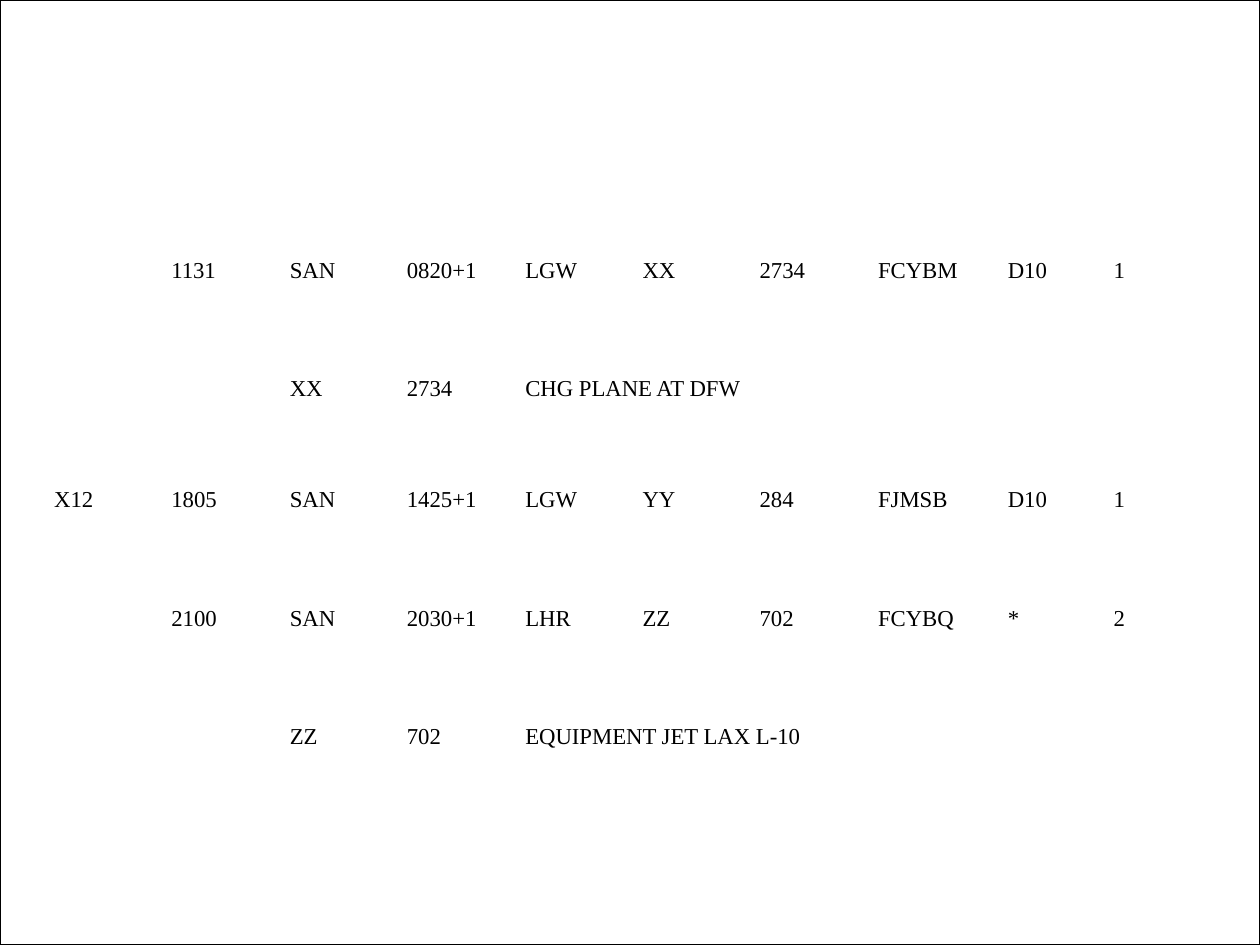
from pptx import Presentation
from pptx import util as u
from pptx.dml.color import RGBColor
from pptx.enum import shapes, text

COLUMN_WIDTHS = [0.93, 0.94, 0.93, 0.94, 0.93, 0.93, 0.94, 1.03, 0.84, 0.93]
ROW_HEIGHTS = [0.94, 0.88, 0.94, 0.94, 0.73]
FLIGHTS = [
    ["", "1131", "SAN", "0820+1", "LGW", "XX", "2734", "FCYBM", "D10", "1"],
    ["", "", "XX", "2734", "CHG PLANE AT DFW"],
    ["X12", "1805", "SAN", "1425+1", "LGW", "YY", "284", "FJMSB", "D10", "1"],
    ["", "2100", "SAN", "2030+1", "LHR", "ZZ", "702", "FCYBQ", "*", "2"],
    ["", "", "ZZ", "702", "EQUIPMENT JET LAX L-10"],
]
REMARK_COLUMN = 4
REMARK_SPANS = {1: 3, 4: 4}
NO_GRID_STYLE = "{2D5ABB26-0587-4C30-8999-92F81FD0307C}"


def color(value):
    return RGBColor.from_string(value)


def add_frame(slide, width, height):
    frame = slide.shapes.add_shape(shapes.MSO_SHAPE.RECTANGLE, 0, 0, width, height)
    frame.shadow.inherit = False
    frame.fill.solid()
    frame.fill.fore_color.rgb = color("FFFFFF")
    frame.line.color.rgb = color("000000")
    frame.line.width = u.Pt(1)


def fill_cell(cell, entry):
    cell.fill.background()
    cell.vertical_anchor = text.MSO_ANCHOR.TOP
    paragraph = cell.text_frame.paragraphs[0]
    paragraph.alignment = text.PP_ALIGN.LEFT
    if entry:
        run = paragraph.add_run()
        run.text = entry
        for name, value in {"name": "Times New Roman", "size": u.Pt(13), "bold": False}.items():
            setattr(run.font, name, value)
        run.font.color.rgb = color("000000")


def add_timetable(slide):
    timetable = slide.shapes.add_table(
        len(ROW_HEIGHTS), len(COLUMN_WIDTHS), u.Inches(0.33), u.Inches(2),
        u.Inches(sum(COLUMN_WIDTHS)), u.Inches(sum(ROW_HEIGHTS))).table
    timetable.first_row = False
    timetable.horz_banding = False
    timetable._tbl.tblPr[0].text = NO_GRID_STYLE
    for column, width in zip(timetable.columns, COLUMN_WIDTHS):
        column.width = u.Inches(width)
    for row, height in zip(timetable.rows, ROW_HEIGHTS):
        row.height = u.Inches(height)
    for row, span in REMARK_SPANS.items():
        last = timetable.cell(row, REMARK_COLUMN + span - 1)
        timetable.cell(row, REMARK_COLUMN).merge(last)
    for row, flight in zip(timetable.rows, FLIGHTS):
        padded = flight + [""] * (len(COLUMN_WIDTHS) - len(flight))
        for cell, entry in zip(row.cells, padded):
            fill_cell(cell, entry)


def main():
    deck = Presentation()
    deck.slide_width = u.Inches(10)
    deck.slide_height = u.Inches(7.5)
    slide = deck.slides.add_slide(deck.slide_layouts[6])
    add_frame(slide, deck.slide_width, deck.slide_height)
    add_timetable(slide)
    deck.save("out.pptx")


if __name__ == "__main__":
    main()
